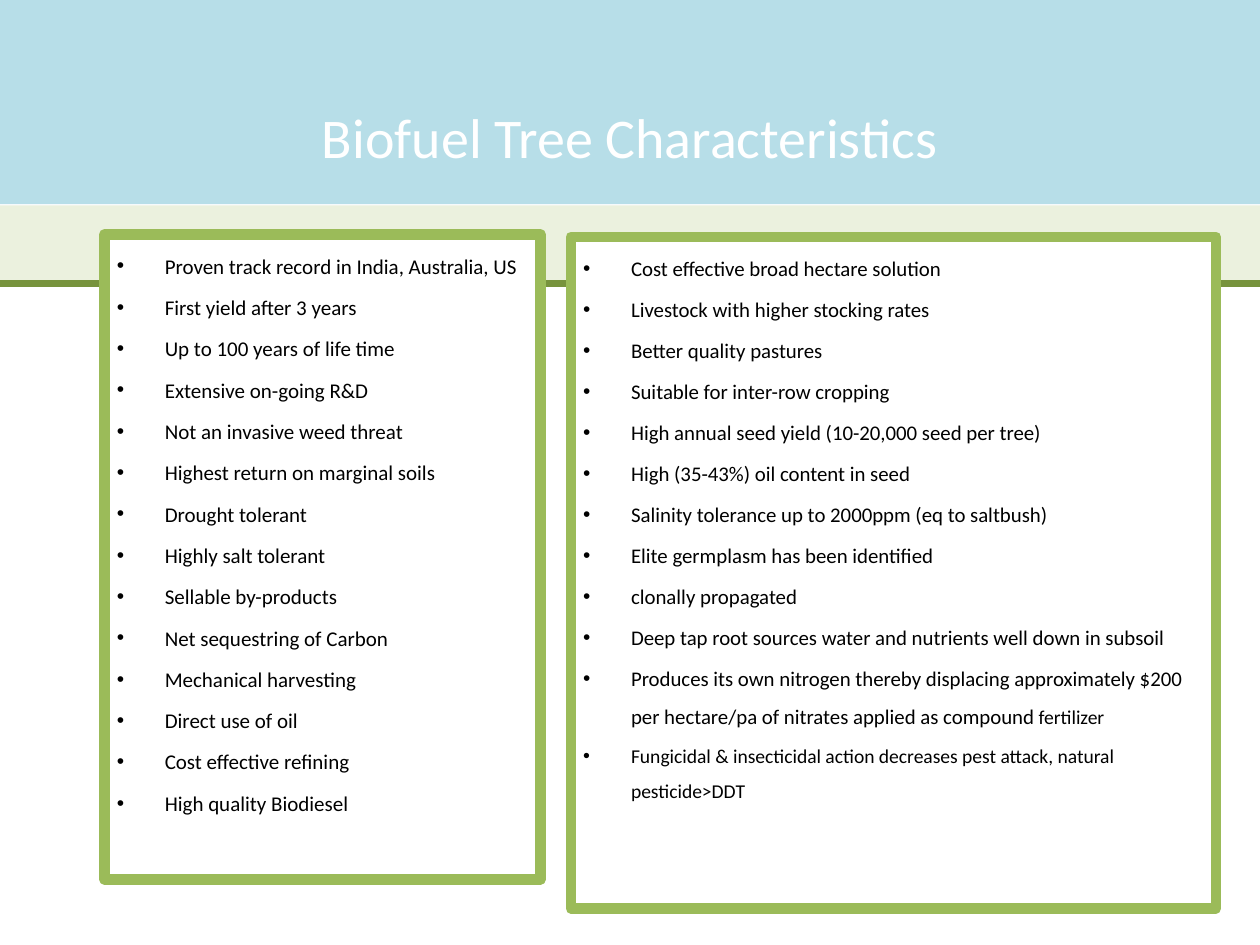
from dataclasses import dataclass

import pptx
import pptx.dml.color
import pptx.enum.shapes
import pptx.enum.text
import pptx.oxml.ns
import pptx.util
from lxml import etree

Inches = pptx.util.Inches
Pt = pptx.util.Pt
RGBColor = pptx.dml.color.RGBColor
qn = pptx.oxml.ns.qn


@dataclass(frozen=True)
class Theme:
    font: str = "Calibri"
    title_size: float = 32
    left_size: float = 12
    right_size: float = 11.9
    small_size: float = 11.2
    white: str = "FFFFFF"
    text: str = "000000"
    title_band: str = "B7DEE8"
    pale_band: str = "EBF1DE"
    rule: str = "77933C"
    frame: str = "9BBB59"


@dataclass(frozen=True)
class Box:
    left: float
    top: float
    width: float
    height: float


@dataclass(frozen=True)
class TextRun:
    text: str
    size: float


@dataclass(frozen=True)
class Panel:
    box: Box
    items: list[list[TextRun]]


THEME = Theme()


def sized(size: float, *texts: str) -> list[list[TextRun]]:
    """Make one single-run item of each text."""
    return [[TextRun(text, size)] for text in texts]


LEFT_PANEL = Panel(Box(0.83, 1.86, 3.46, 5.12), sized(
    THEME.left_size,
    "Proven track record in India, Australia, US",
    "First yield after 3 years",
    "Up to 100 years of life time",
    "Extensive on-going R&D",
    "Not an invasive weed threat",
    "Highest return on marginal soils",
    "Drought tolerant",
    "Highly salt tolerant",
    "Sellable by-products",
    "Net sequestring of Carbon",
    "Mechanical harvesting",
    "Direct use of oil",
    "Cost effective refining",
    "High quality Biodiesel",
))

RIGHT_PANEL = Panel(Box(4.53, 1.88, 5.12, 5.33), [
    *sized(
        THEME.right_size,
        "Cost effective broad hectare solution",
        "Livestock with higher stocking rates",
        "Better quality pastures",
        "Suitable for inter-row cropping",
        "High annual seed yield (10-20,000 seed per tree)",
        "High (35-43%) oil content in seed",
        "Salinity tolerance up to 2000ppm (eq to saltbush)",
        "Elite germplasm has been identified",
        "clonally propagated",
        "Deep tap root sources water and nutrients well down in subsoil",
    ),
    [
        TextRun("Produces its own nitrogen thereby displacing approximately $200 "
                "per hectare/pa of nitrates applied as compound ", THEME.right_size),
        TextRun("fertilizer", THEME.small_size),
    ],
    *sized(
        THEME.small_size,
        "Fungicidal & insecticidal action decreases pest attack, natural pesticide>DDT",
    ),
])


def add_rectangle(slide, box: Box, fill: str, line: str | None = None):
    shape = slide.shapes.add_shape(
        pptx.enum.shapes.MSO_SHAPE.RECTANGLE,
        Inches(box.left), Inches(box.top), Inches(box.width), Inches(box.height))
    shape.shadow.inherit = False
    shape.fill.solid()
    shape.fill.fore_color.rgb = RGBColor.from_string(fill)
    if line:
        shape.line.color.rgb = RGBColor.from_string(line)
        shape.line.width = Pt(6)
    else:
        shape.line.fill.background()
    return shape


def add_title(slide, text: str) -> None:
    shape = add_rectangle(slide, Box(0, 0, 10, 1.62), THEME.title_band)
    frame = shape.text_frame
    frame.word_wrap = True
    frame.vertical_anchor = pptx.enum.text.MSO_ANCHOR.MIDDLE
    frame.margin_top = Inches(0.59)  # sets the title low in its band
    paragraph = frame.paragraphs[0]
    paragraph.text = text
    paragraph.alignment = pptx.enum.text.PP_ALIGN.CENTER
    paragraph.font.name = THEME.font
    paragraph.font.size = Pt(THEME.title_size)
    paragraph.font.color.rgb = RGBColor.from_string(THEME.white)


def add_rule(slide, y: float) -> None:
    connector = slide.shapes.add_connector(
        pptx.enum.shapes.MSO_CONNECTOR.STRAIGHT,
        Inches(0), Inches(y), Inches(10), Inches(y))
    connector.line.color.rgb = RGBColor.from_string(THEME.rule)
    connector.line.width = Pt(4.5)
    etree.SubElement(connector._element.spPr, qn("a:effectLst"))


def add_bullet(paragraph) -> None:
    properties = paragraph._p.get_or_add_pPr()
    properties.set("marL", str(Inches(0.38)))
    properties.set("indent", str(Inches(-0.38)))
    etree.SubElement(properties, qn("a:buFont")).set("typeface", "Arial")
    etree.SubElement(properties, qn("a:buChar")).set("char", "•")


def add_panel(slide, panel: Panel) -> None:
    shape = add_rectangle(slide, panel.box, THEME.white, THEME.frame)
    frame = shape.text_frame
    frame.word_wrap = True
    frame.vertical_anchor = pptx.enum.text.MSO_ANCHOR.TOP
    for index, item in enumerate(panel.items):
        paragraph = frame.add_paragraph() if index else frame.paragraphs[0]
        add_bullet(paragraph)
        paragraph.alignment = pptx.enum.text.PP_ALIGN.LEFT
        paragraph.line_spacing = 1.5
        paragraph.space_before = Pt(2 if index else 0)
        paragraph.font.name = THEME.font
        paragraph.font.size = Pt(item[0].size)
        paragraph.font.color.rgb = RGBColor.from_string(THEME.text)
        for part in item:
            run = paragraph.add_run()
            run.text = part.text
            if part.size != item[0].size:
                run.font.size = Pt(part.size)


def main() -> None:
    presentation = pptx.Presentation()
    presentation.slide_width = Inches(10)
    presentation.slide_height = Inches(7.5)
    slide = presentation.slides.add_slide(presentation.slide_layouts[6])

    # Header bands and rule
    add_title(slide, "Biofuel Tree Characteristics")
    add_rectangle(slide, Box(0, 1.63, 10, 0.63), THEME.pale_band)
    add_rule(slide, 2.25)

    # Framed lists
    for panel in (RIGHT_PANEL, LEFT_PANEL):
        add_panel(slide, panel)

    presentation.save("out.pptx")


if __name__ == "__main__":
    main()
